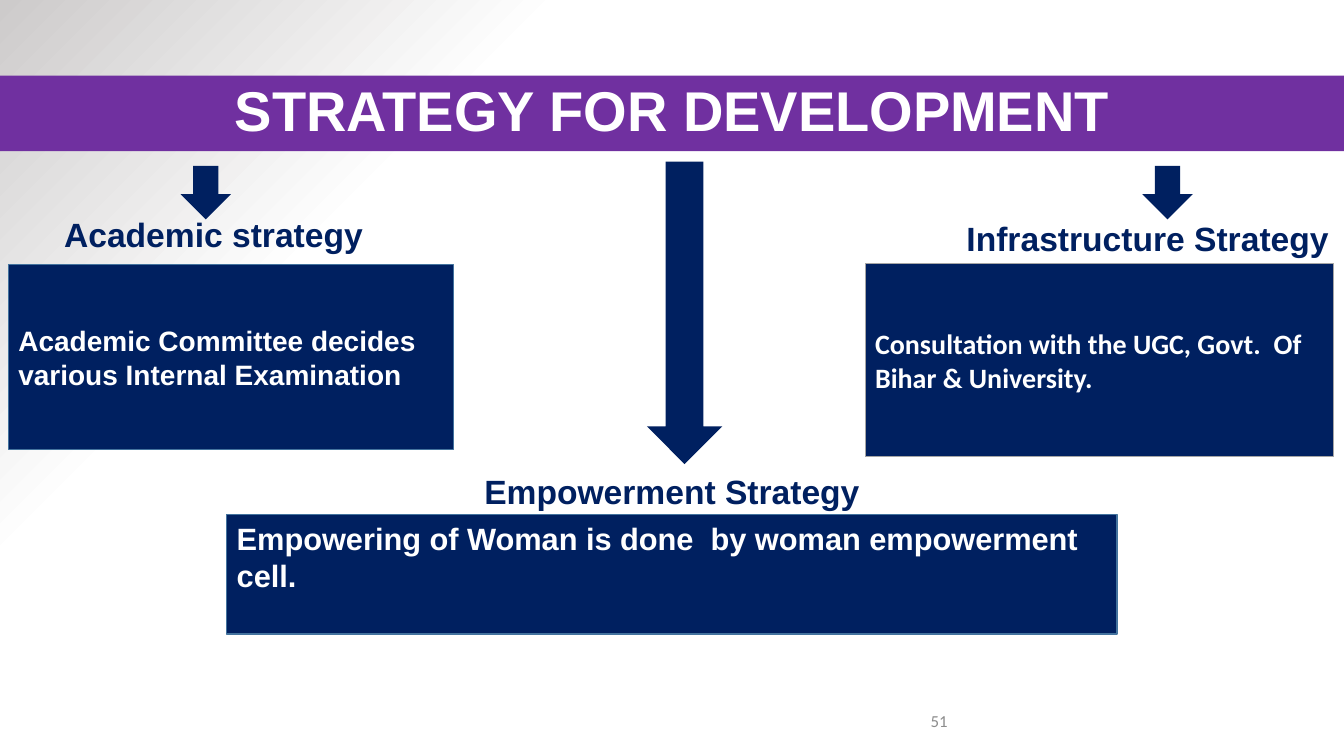
import lxml.etree
import pptx
import pptx.dml.color
import pptx.enum.shapes
import pptx.enum.text
import pptx.oxml
import pptx.oxml.ns
import pptx.util

PX = 9525  # EMU per px, 96 px to the inch
WIDTH, HEIGHT = 1280, 720
COLORS = {
    "purple": "7030A0",
    "navy": "002060",
    "white": "FFFFFF",
    "mist": "CDCBCB",
    "blue_edge": "43739E",
    "grey_edge": "A5A5A5",
    "number": "8C8C8C",
}
SHAPES = pptx.enum.shapes.MSO_SHAPE
ALIGN = pptx.enum.text.PP_ALIGN
ANCHOR = pptx.enum.text.MSO_ANCHOR


def rgb(name):
    return pptx.dml.color.RGBColor.from_string(COLORS[name])


def emu(box):
    return [length * PX for length in box]


def write(shape, text, size, color="white", font="Arial", bold=True, align=ALIGN.LEFT,
          anchor=ANCHOR.TOP, spacing=None, indent=0, grow=False):
    frame = shape.text_frame
    frame.word_wrap = True
    frame.vertical_anchor = anchor
    if indent:
        frame.margin_left = indent * PX
    if grow:
        frame.auto_size = pptx.enum.text.MSO_AUTO_SIZE.SHAPE_TO_FIT_TEXT
    paragraph = frame.paragraphs[0]
    paragraph.alignment = align
    if spacing:
        paragraph.line_spacing = spacing
    run = paragraph.add_run()
    run.text = text
    run.font.size = pptx.util.Pt(size)
    run.font.name = font
    run.font.bold = bold
    run.font.color.rgb = rgb(color)


def add_block(slide, kind, box, fill="navy", edge=None, edge_width=1):
    block = slide.shapes.add_shape(kind, *emu(box))
    block.shadow.inherit = False
    block.fill.solid()
    block.fill.fore_color.rgb = rgb(fill)
    if edge:
        block.line.color.rgb = rgb(edge)
        block.line.width = pptx.util.Pt(edge_width)
    else:
        block.line.fill.background()
    return block


def add_text(slide, box, text, **style):
    write(slide.shapes.add_textbox(*emu(box)), text, **style)


def paint_background(slide):
    """White page shading to grey in the top left corner."""
    fill = slide.background.fill
    fill.gradient()
    for stop, position, color in zip(fill.gradient_stops, (0.73, 1), ("white", "mist")):
        stop.position = position
        stop.color.rgb = rgb(color)
    gradient = slide._element.find(".//" + pptx.oxml.ns.qn("a:gradFill"))
    for tag in ("a:lin", "a:tileRect"):
        for old in gradient.findall(pptx.oxml.ns.qn(tag)):
            gradient.remove(old)
    namespace = pptx.oxml.ns.nsdecls("a")
    gradient.append(pptx.oxml.parse_xml(
        f'<a:path {namespace} path="circle"><a:fillToRect l="100000" t="100000"/></a:path>'))
    gradient.append(pptx.oxml.parse_xml(
        f'<a:tileRect {namespace} r="-100000" b="-100000"/>'))


def add_title(slide, box):
    banner = add_block(slide, SHAPES.RECTANGLE, box, fill="purple")
    write(banner, "STRATEGY FOR DEVELOPMENT", size=40, align=ALIGN.CENTER,
          anchor=ANCHOR.MIDDLE, spacing=0.9)


def add_strategy(slide, box, heading, detail, arrow, label, label_style=None,
                 detail_style=None, edge="blue_edge", edge_width=1):
    """Detail panel in box; arrow and label are placed from the panel's top left corner."""
    left, top, width, height = box

    def from_panel(part):
        return left + part[0], top + part[1], part[2], part[3]

    panel = add_block(slide, SHAPES.RECTANGLE, box, edge=edge, edge_width=edge_width)
    write(panel, detail, **{"size": 20, "anchor": ANCHOR.MIDDLE, **(detail_style or {})})
    add_text(slide, from_panel(label), heading, size=24, color="navy", grow=True,
             **(label_style or {}))
    add_block(slide, SHAPES.DOWN_ARROW, from_panel(arrow))


def add_page_number(slide, box):
    add_text(slide, box, "51", size=12, color="number", font="Calibri", bold=False,
             align=ALIGN.RIGHT, anchor=ANCHOR.MIDDLE)


def main():
    deck = pptx.Presentation()
    deck.slide_width, deck.slide_height = emu((WIDTH, HEIGHT))
    slide = deck.slides.add_slide(deck.slide_layouts[6])
    paint_background(slide)
    add_title(slide, (0, 72, WIDTH, 72))
    add_strategy(
        slide, (8, 252, 424, 176), "Academic strategy",
        "Academic Committee decides various Internal Examination",
        arrow=(164, -94, 48, 51), label=(8, -53, 416, 48), label_style={"indent": 45})
    add_strategy(
        slide, (824, 251, 446, 184), "Infrastructure Strategy",
        "Consultation with the UGC, Govt.  Of Bihar & University.",
        arrow=(264, -93, 48, 51), label=(87, -48, 400, 48),
        detail_style={"font": "Calibri"}, edge="grey_edge", edge_width=0.5)
    add_strategy(
        slide, (216, 490, 848, 114), "Empowerment Strategy",
        "Empowering of Woman is done  by woman empowerment cell.",
        arrow=(400, -336, 72, 288), label=(140, -46, 568, 48),
        label_style={"align": ALIGN.CENTER},
        detail_style={"size": 22, "anchor": ANCHOR.TOP})
    add_page_number(slide, (688, 667, 224, 38))
    deck.save("out.pptx")


if __name__ == "__main__":
    main()
